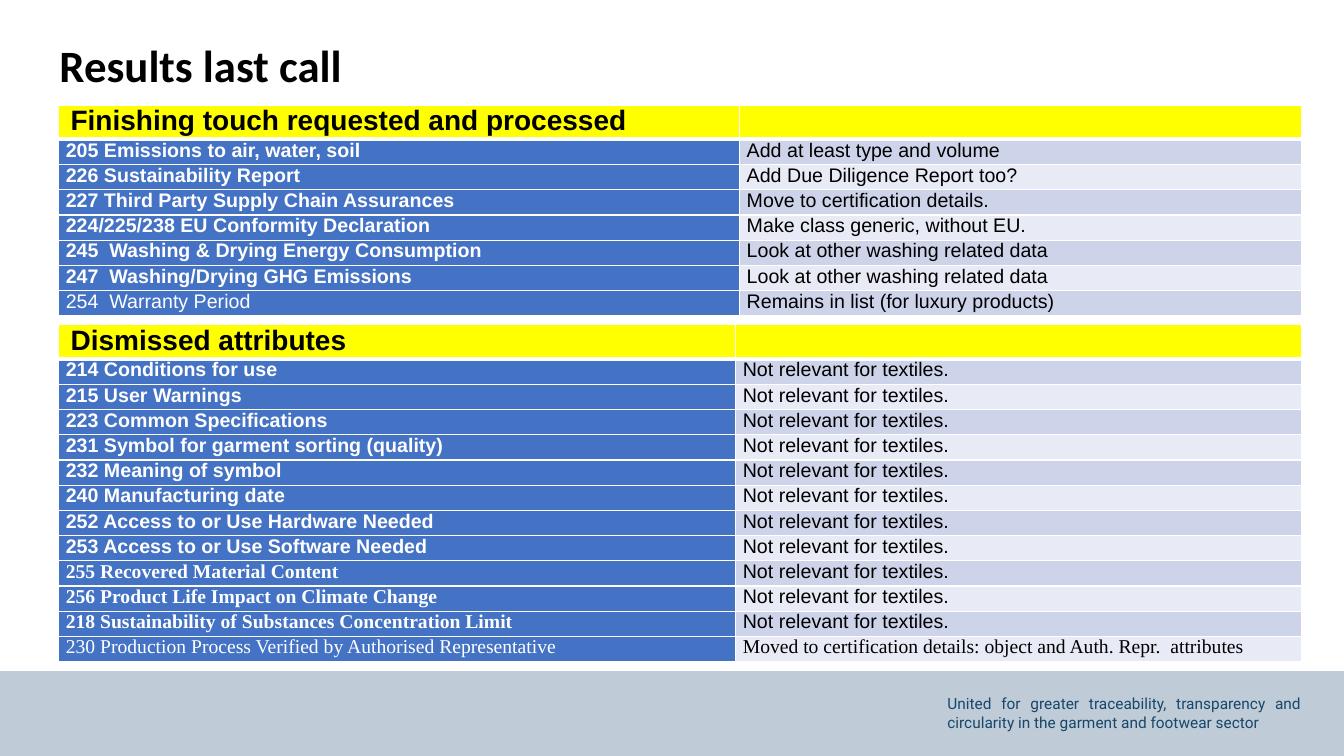
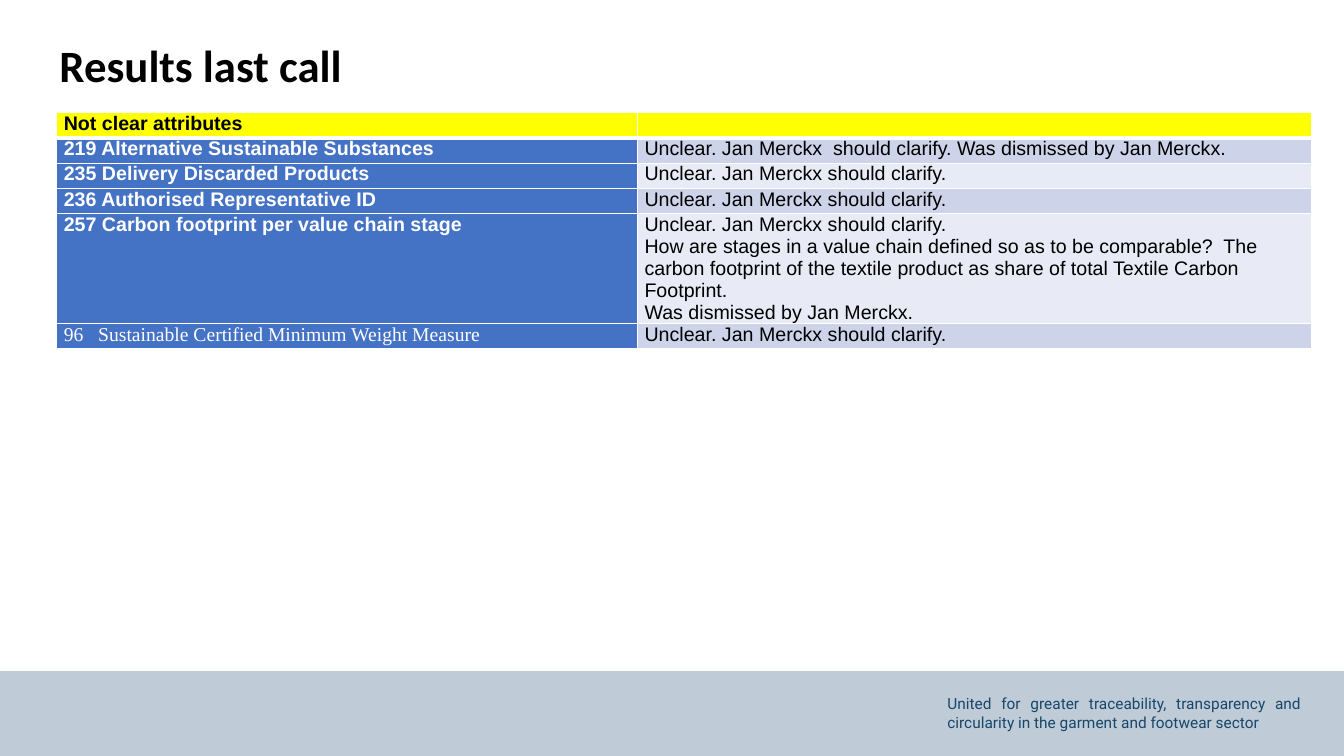
from lxml import etree
from pptx import Presentation
from pptx.dml.color import RGBColor
from pptx.enum.shapes import MSO_SHAPE
from pptx.enum.text import MSO_ANCHOR, MSO_AUTO_SIZE, PP_ALIGN
from pptx.oxml.ns import qn
from pptx.util import Pt

RECTANGLE = MSO_SHAPE.RECTANGLE
MIDDLE, TOP = MSO_ANCHOR.MIDDLE, MSO_ANCHOR.TOP
LEFT, JUSTIFY = PP_ALIGN.LEFT, PP_ALIGN.JUSTIFY
NO_AUTOFIT = MSO_AUTO_SIZE.NONE

BLACK = RGBColor(0x00, 0x00, 0x00)
WHITE = RGBColor(0xFF, 0xFF, 0xFF)
YELLOW = RGBColor(0xFF, 0xFF, 0x00)
BLUE = RGBColor(0x44, 0x72, 0xC4)
BAND_DARK = RGBColor(0xCD, 0xD4, 0xEA)
BAND_LIGHT = RGBColor(0xE8, 0xEB, 0xF5)
FOOTER_FILL = RGBColor(0xBF, 0xCB, 0xD6)
FOOTER_TEXT = RGBColor(0x17, 0x47, 0x6B)

SANS, SERIF = "Arial", "Times New Roman"
SLIDE_WIDTH, SLIDE_HEIGHT = 960, 540
FOOTER_TOP = 479.4
ROW_HEIGHT = 18
BODY_SIZE = 14
CELL_INSET = 5.2

TITLE = "Results last call"
TAGLINE = ("United for greater traceability, transparency and circularity "
           "in the garment and footwear sector")
IRRELEVANT = "Not relevant for textiles."
WASHING = "Look at other washing related data"
UNCLEAR = "Unclear. Jan Merckx should clarify."

FINISHING = {
    "heading": "Finishing touch requested and processed",
    "heading_size": 20, "heading_inset": 8.6, "heading_height": 23,
    "left": 41.8, "top": 75, "columns": (486.4, 401.6),
    "rows": [
        ("205 Emissions to air, water, soil", "Add at least type and volume"),
        ("226 Sustainability Report", "Add Due Diligence Report too?"),
        ("227 Third Party Supply Chain Assurances", "Move to certification details."),
        ("224/225/238 EU Conformity Declaration", "Make class generic, without EU."),
        ("245  Washing & Drying Energy Consumption", WASHING),
        ("247  Washing/Drying GHG Emissions", WASHING),
        ("254  Warranty Period", "Remains in list (for luxury products)"),
    ],
    "serif": set(), "tall_rows": {},
}
DISMISSED = {
    "heading": "Dismissed attributes",
    "heading_size": 20, "heading_inset": 8.6, "heading_height": 23,
    "left": 41.8, "top": 232, "columns": (483.6, 404.4),
    "rows": [
        ("214 Conditions for use", IRRELEVANT),
        ("215 User Warnings", IRRELEVANT),
        ("223 Common Specifications", IRRELEVANT),
        ("231 Symbol for garment sorting (quality)", IRRELEVANT),
        ("232 Meaning of symbol", IRRELEVANT),
        ("240 Manufacturing date", IRRELEVANT),
        ("252 Access to or Use Hardware Needed", IRRELEVANT),
        ("253 Access to or Use Software Needed", IRRELEVANT),
        ("255 Recovered Material Content", IRRELEVANT),
        ("256 Product Life Impact on Climate Change", IRRELEVANT),
        ("218 Sustainability of Substances Concentration Limit", IRRELEVANT),
        ("230 Production Process Verified by Authorised Representative",
         "Moved to certification details: object and Auth. Repr.  attributes"),
    ],
    "serif": {(9, 0), (10, 0), (11, 0), (12, 0), (12, 1)}, "tall_rows": {},
}
NOT_CLEAR = {
    "heading": "Not clear attributes",
    "heading_size": BODY_SIZE, "heading_inset": CELL_INSET, "heading_height": ROW_HEIGHT,
    "left": 40.4, "top": 80.5, "columns": (414.8, 481.6),
    "rows": [
        ("219 Alternative Sustainable Substances",
         "Unclear. Jan Merckx  should clarify. Was dismissed by Jan Merckx."),
        ("235 Delivery Discarded Products", UNCLEAR),
        ("236 Authorised Representative ID", UNCLEAR),
        ("257 Carbon footprint per value chain stage",
         UNCLEAR + "\nHow are stages in a value chain defined so as to be comparable?  "
         "The carbon footprint of the textile product as share of total Textile "
         "Carbon Footprint.\nWas dismissed by Jan Merckx."),
        ("96   Sustainable Certified Minimum Weight Measure", UNCLEAR),
    ],
    "serif": {(5, 0)}, "tall_rows": {4: 78.5},
}
SLIDES = [[FINISHING, DISMISSED], [NOT_CLEAR]]


def format_text(text_frame, font_name, size, color, bold=False, alignment=LEFT):
    for paragraph in text_frame.paragraphs:
        paragraph.alignment = alignment
        for run in paragraph.runs:
            run.font.name = font_name
            run.font.size = Pt(size)
            run.font.bold = bold
            run.font.color.rgb = color
        if not paragraph.runs:
            end_properties = etree.SubElement(paragraph._p, qn("a:endParaRPr"))
            end_properties.set("sz", str(size * 100))


def set_borders(cell, top_width, bottom_width):
    properties = cell._tc.get_or_add_tcPr()
    widths = {"a:lnL": 1, "a:lnR": 1, "a:lnT": top_width, "a:lnB": bottom_width}
    for tag, width in widths.items():
        line = etree.SubElement(properties, qn(tag), w=str(Pt(width)))
        fill = etree.SubElement(line, qn("a:solidFill"))
        etree.SubElement(fill, qn("a:srgbClr"), val=str(WHITE))


def add_footer(layout, slide):
    band = slide.shapes.add_shape(RECTANGLE, 0, Pt(FOOTER_TOP), Pt(SLIDE_WIDTH),
                                  Pt(SLIDE_HEIGHT - FOOTER_TOP))
    band.shadow.inherit = False
    band.fill.solid()
    band.fill.fore_color.rgb = FOOTER_FILL
    band.line.fill.background()
    tagline = slide.shapes.add_textbox(Pt(669.6), Pt(492.5), Pt(267), Pt(34))
    tagline.text_frame.word_wrap = True
    tagline.text_frame.text = TAGLINE
    format_text(tagline.text_frame, "Roboto", 11, FOOTER_TEXT, alignment=JUSTIFY)
    for shape in (band, tagline):
        layout.shapes.element.append(shape.element)


def set_title(slide):
    title = slide.shapes.title
    title.left, title.top, title.width, title.height = Pt(35.3), Pt(15.8), Pt(596), Pt(65.5)
    text_frame = title.text_frame
    text_frame.text = TITLE
    text_frame.word_wrap = True
    text_frame.auto_size = NO_AUTOFIT
    text_frame.vertical_anchor = MIDDLE
    text_frame.paragraphs[0].line_spacing = 0.9
    format_text(text_frame, "Calibri", 32, BLACK, bold=True)


def add_attribute_table(slide, content):
    rows = [(content["heading"], "")] + content["rows"]
    heights = [content["heading_height"]] + [
        content["tall_rows"].get(index, ROW_HEIGHT) for index in range(1, len(rows))]
    table = slide.shapes.add_table(
        len(rows), 2, Pt(content["left"]), Pt(content["top"]),
        Pt(sum(content["columns"])), Pt(sum(heights))).table
    table.first_row = table.horz_banding = False
    for column, width in zip(table.columns, content["columns"]):
        column.width = Pt(width)
    for row_index, texts in enumerate(rows):
        table.rows[row_index].height = Pt(heights[row_index])
        is_heading = row_index == 0
        is_last = row_index == len(rows) - 1
        for column_index, text in enumerate(texts):
            cell = table.cell(row_index, column_index)
            is_label = column_index == 0
            inset, size, color = CELL_INSET, BODY_SIZE, BLACK
            if is_heading:
                fill = YELLOW
                inset, size = content["heading_inset"], content["heading_size"]
            elif is_label:
                fill, color = BLUE, WHITE
            else:
                fill = BAND_DARK if row_index % 2 else BAND_LIGHT
            set_borders(cell, 3 if row_index == 1 else 1, 3 if is_heading else 1)
            cell.fill.solid()
            cell.fill.fore_color.rgb = fill
            cell.margin_left = cell.margin_right = Pt(inset)
            cell.margin_top = cell.margin_bottom = 0
            cell.vertical_anchor = TOP
            cell.text_frame.text = text
            font_name = SERIF if (row_index, column_index) in content["serif"] else SANS
            format_text(cell.text_frame, font_name, size, color,
                        bold=is_label and not is_last)


def main():
    presentation = Presentation()
    presentation.slide_width = Pt(SLIDE_WIDTH)
    presentation.slide_height = Pt(SLIDE_HEIGHT)
    layout = presentation.slide_layouts[5]
    for index, tables in enumerate(SLIDES):
        slide = presentation.slides.add_slide(layout)
        if index == 0:
            add_footer(layout, slide)
        set_title(slide)
        for content in tables:
            add_attribute_table(slide, content)
    presentation.save("out.pptx")


if __name__ == "__main__":
    main()
